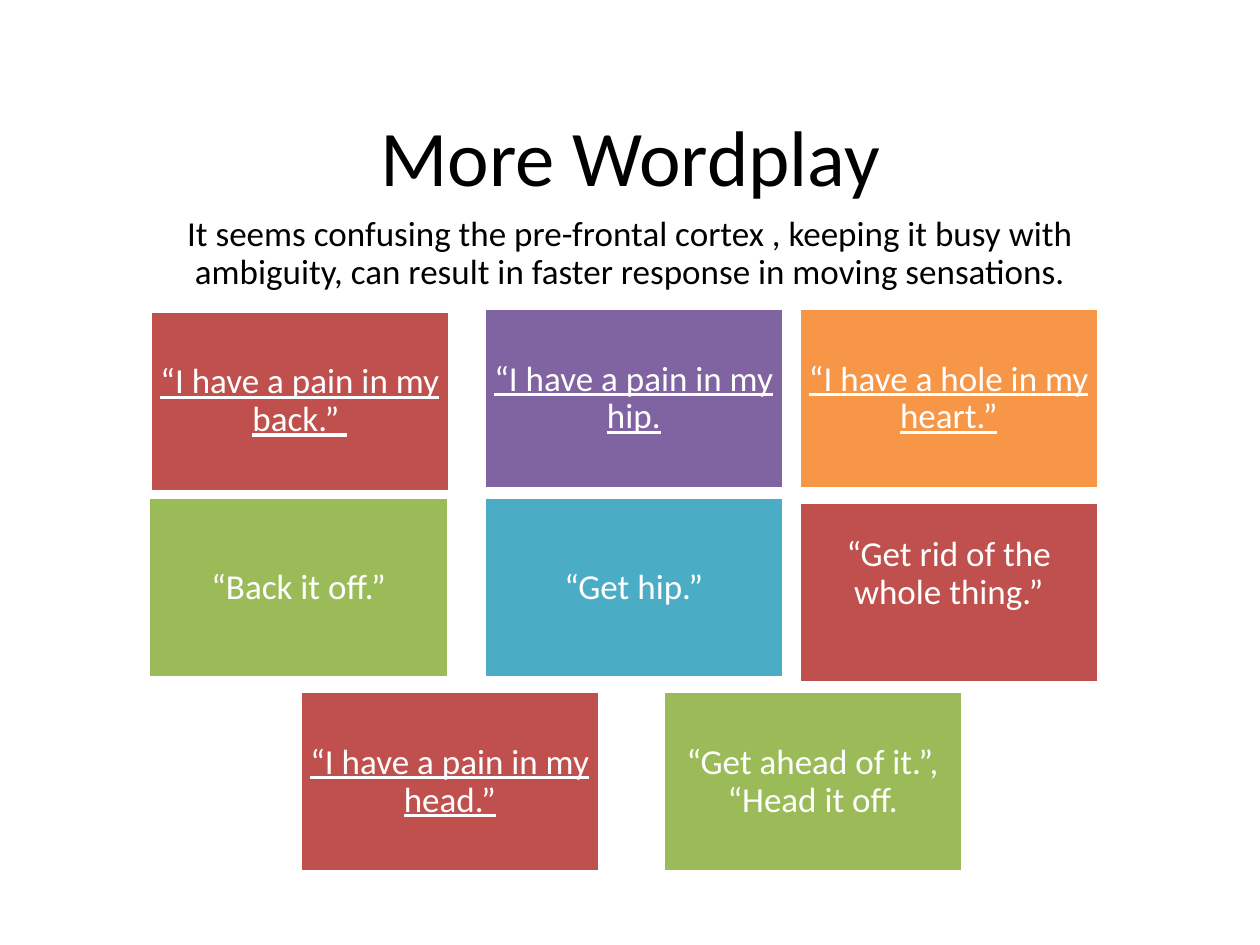
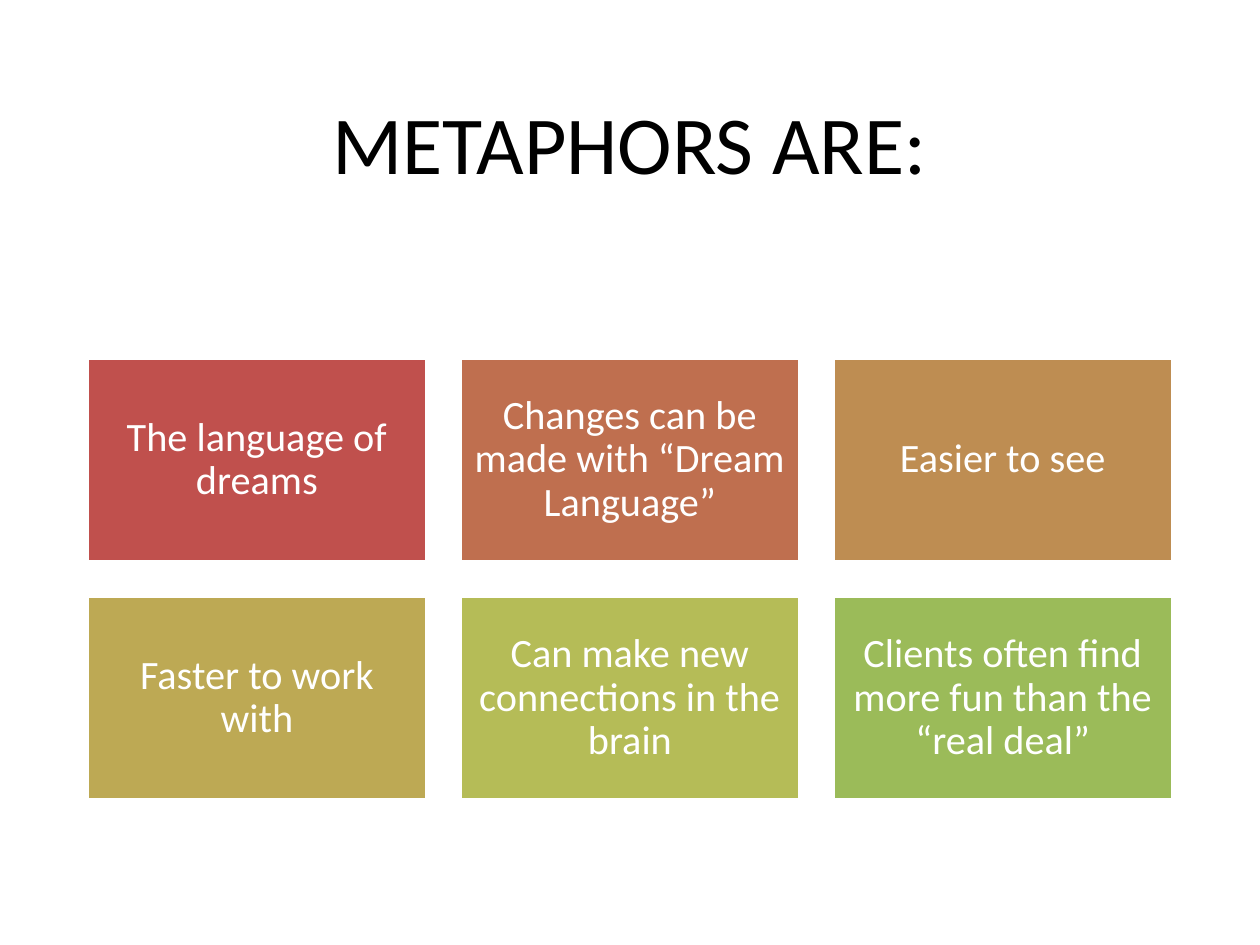
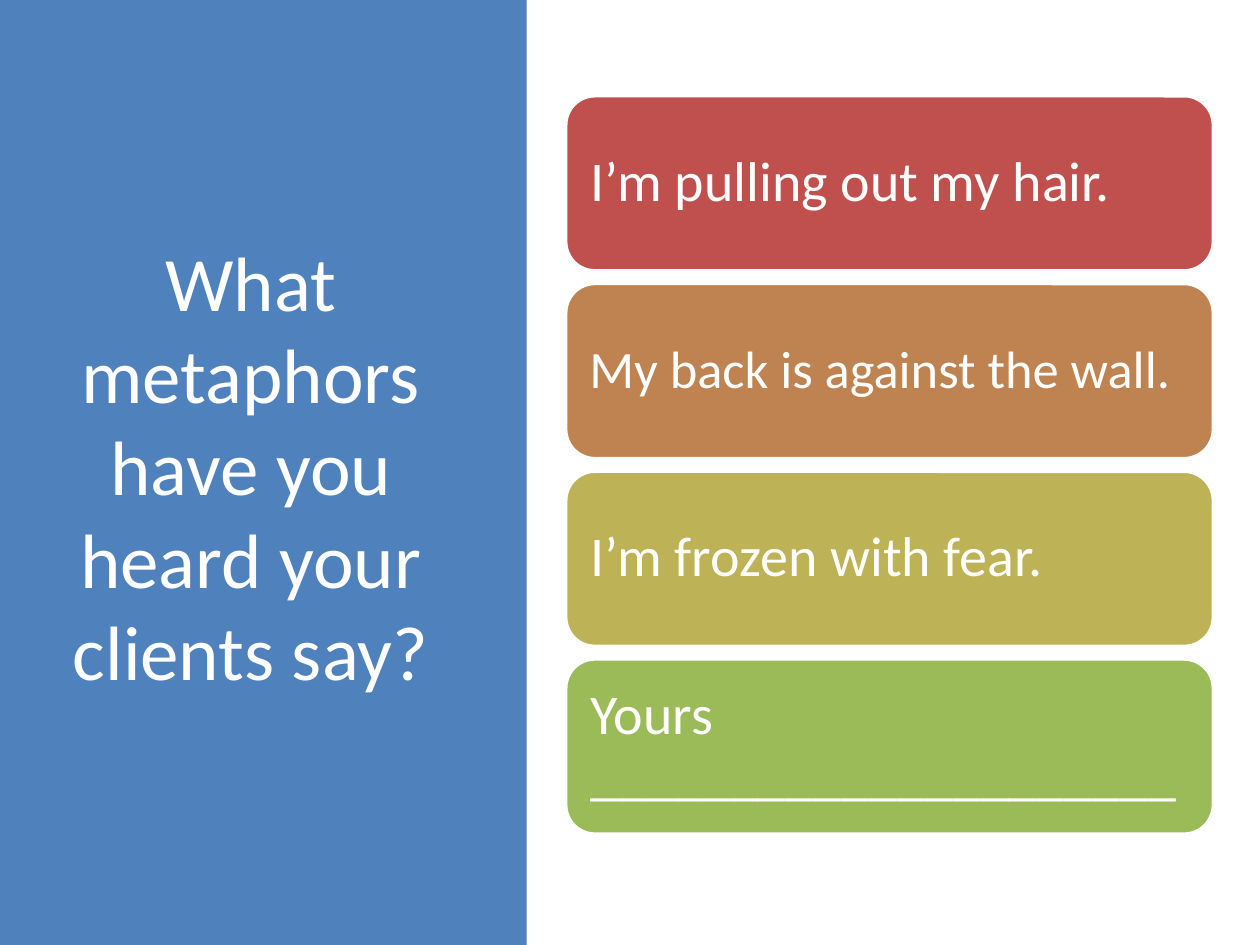
import pptx
import pptx.dml.color
import pptx.enum.shapes
import pptx.enum.text
import pptx.util

Inches = pptx.util.Inches
RGBColor = pptx.dml.color.RGBColor
Shape = pptx.enum.shapes.MSO_SHAPE
Align = pptx.enum.text.PP_ALIGN

FONT = "Calibri"
BLACK = RGBColor(0x00, 0x00, 0x00)
WHITE = RGBColor(0xFF, 0xFF, 0xFF)
BLUE = RGBColor(0x4F, 0x81, 0xBD)
RED = RGBColor(0xC0, 0x50, 0x4D)
GREEN = RGBColor(0x9B, 0xBB, 0x59)
PURPLE = RGBColor(0x80, 0x64, 0xA2)
TEAL = RGBColor(0x4B, 0xAC, 0xC6)
ORANGE = RGBColor(0xF7, 0x96, 0x46)
RUST = RGBColor(0xBF, 0x6F, 0x4F)
TAN = RGBColor(0xBE, 0x8D, 0x52)
COPPER = RGBColor(0xBE, 0x83, 0x51)
GOLD = RGBColor(0xBD, 0xA9, 0x54)
KHAKI = RGBColor(0xBD, 0xB2, 0x55)
LIME = RGBColor(0xB5, 0xBC, 0x57)


def write_text(shape, text, *, size, color=WHITE, align=Align.CENTER, underline=False,
               spacing=0.9, inset=None, bottom=None):
    frame = shape.text_frame
    frame.word_wrap = True
    frame.vertical_anchor = pptx.enum.text.MSO_ANCHOR.MIDDLE
    if inset is not None:
        frame.margin_left = frame.margin_right = frame.margin_top = Inches(inset)
        frame.margin_bottom = Inches(inset if bottom is None else bottom)
    paragraph = frame.paragraphs[0]
    paragraph.alignment = align
    paragraph.line_spacing = spacing
    run = paragraph.add_run()
    run.text = text
    run.font.name = FONT
    run.font.size = pptx.util.Pt(size)
    run.font.color.rgb = color
    if underline:
        run.font.underline = True


def add_card(slide, left, top, width, height, fill, kind=Shape.RECTANGLE):
    card = slide.shapes.add_shape(kind, Inches(left), Inches(top), Inches(width), Inches(height))
    card.shadow.inherit = False
    card.fill.solid()
    card.fill.fore_color.rgb = fill
    card.line.color.rgb = WHITE
    card.line.width = pptx.util.Pt(2)
    return card


presentation = pptx.Presentation()
presentation.slide_width = Inches(10)
presentation.slide_height = Inches(7.5)
blank_layout = presentation.slide_layouts[6]
wordplay_slide, metaphors_slide, clients_slide = [
    presentation.slides.add_slide(blank_layout) for _ in range(3)
]

panel = add_card(clients_slide, 0, 0, 4.18, 7.5, BLUE)
panel.line.fill.background()

titles = [
    (wordplay_slide, "More Wordplay", 0.69, 0.61, 8.62, 1.24, 45, BLACK),
    (metaphors_slide, "METAPHORS ARE:", 0.69, 0.4, 8.62, 1.45, 47, BLACK),
    (clients_slide, "What metaphors have you heard your clients say?", 0.43, 0.68, 3.12, 6.02, 44, WHITE),
]
for slide, text, left, top, width, height, size, color in titles:
    title = slide.shapes.add_textbox(Inches(left), Inches(top), Inches(width), Inches(height))
    write_text(title, text, size=size, color=color, spacing=1.0)

explanation = wordplay_slide.shapes.add_textbox(Inches(1.25), Inches(1.58), Inches(7.5), Inches(0.87))
write_text(
    explanation,
    "It seems confusing the pre-frontal cortex , keeping it busy with ambiguity, "
    "can result in faster response in moving sensations.",
    size=20, color=BLACK, inset=0.06,
)

phrases = [
    ("“I have a pain in my back.” ", 1.19, 2.47, RED, True, 0.08),
    ("“Back it off.”", 1.18, 3.95, GREEN, False, 0.08),
    ("“I have a pain in my hip.", 3.84, 2.45, PURPLE, True, 0.08),
    ("“Get hip.”", 3.84, 3.95, TEAL, False, 0.08),
    ("“I have a hole in my heart.”", 6.34, 2.45, ORANGE, True, 0.08),
    ("“Get rid of the whole thing.”", 6.34, 3.99, RED, False, 0.38),
    ("“I have a pain in my head.”", 2.38, 5.49, RED, True, 0.08),
    ("“Get ahead of it.”, “Head it off.", 5.26, 5.49, GREEN, False, 0.08),
]
for text, left, top, fill, underline, bottom in phrases:
    card = add_card(wordplay_slide, left, top, 2.38, 1.43, fill)
    write_text(card, text, size=20, underline=underline, inset=0.08, bottom=bottom)

qualities = [
    ("The language of dreams", RED),
    ("Changes can be made with “Dream Language”", RUST),
    ("Easier to see", TAN),
    ("Faster to work with", GOLD),
    ("Can make new connections in the brain", LIME),
    ("Clients often find more fun than the “real deal”", GREEN),
]
for index, (text, fill) in enumerate(qualities):
    row, column = divmod(index, 3)
    card = add_card(metaphors_slide, 0.69 + 2.96 * column, 2.84 + 1.89 * row, 2.7, 1.62, fill)
    write_text(card, text, size=23, inset=0.1)

sayings = [
    ("I’m pulling out my hair.", RED, 32, 0.13),
    ("My back is against the wall.", COPPER, 30, 0.12),
    ("I’m frozen with fear.", KHAKI, 32, 0.13),
    ("Yours _____________________", GREEN, 32, 0.13),
]
for index, (text, fill, size, inset) in enumerate(sayings):
    card = add_card(clients_slide, 4.49, 0.76 + 1.49 * index, 5.14, 1.39, fill, Shape.ROUNDED_RECTANGLE)
    write_text(card, text, size=size, align=Align.LEFT, inset=inset)

presentation.save("out.pptx")
